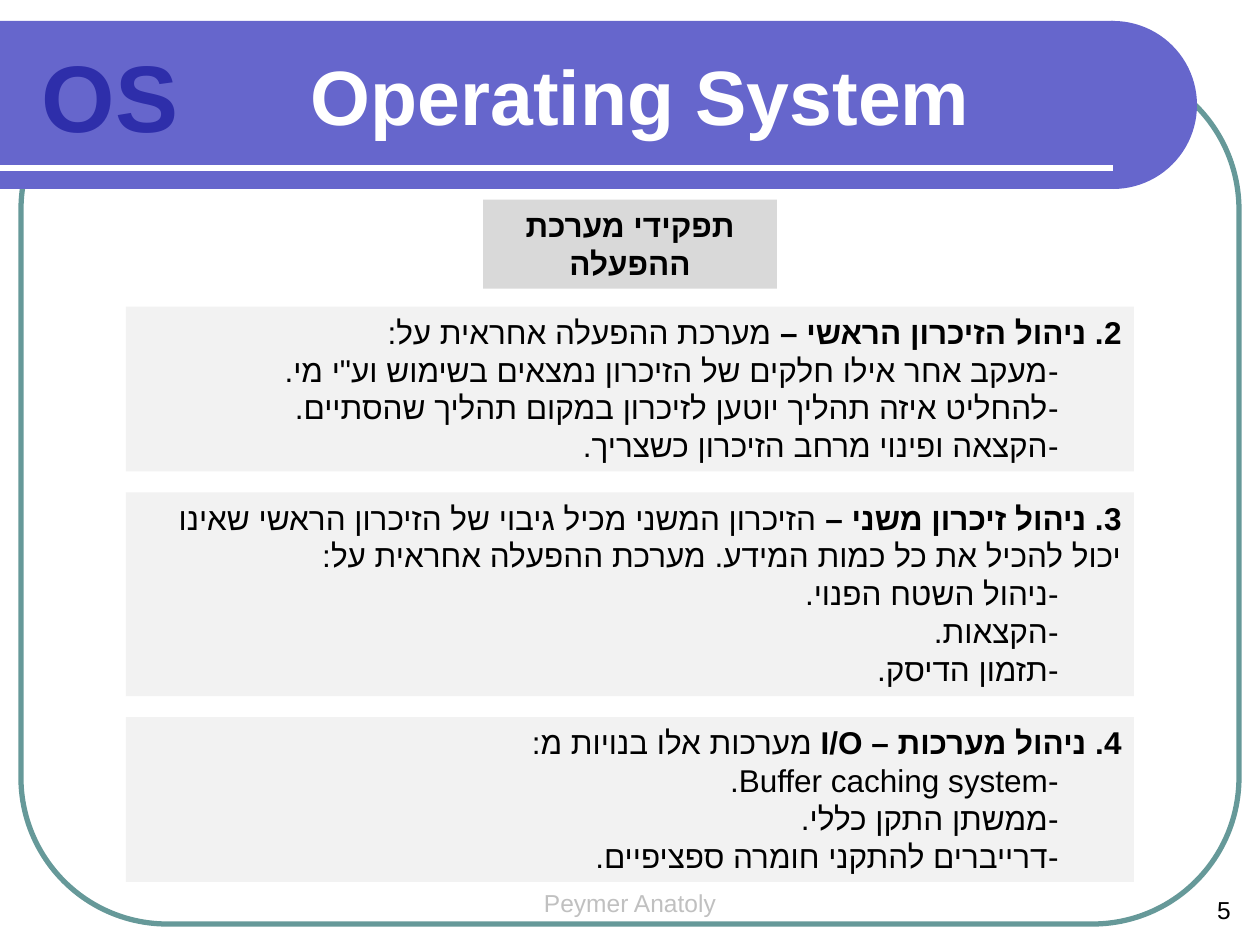
from dataclasses import dataclass
from typing import Any

from lxml.etree import SubElement
from pptx import Presentation
from pptx.dml.color import RGBColor
from pptx.enum.shapes import MSO_CONNECTOR, MSO_SHAPE
from pptx.enum.text import MSO_ANCHOR, PP_ALIGN
from pptx.oxml.ns import qn
from pptx.util import Inches, Pt

COLUMN = Inches(10) // 60


def color(hex_value):
    return RGBColor.from_string(hex_value)


def cells(*counts):
    return [round(count * COLUMN) for count in counts]


@dataclass
class Deck:
    slide: Any
    font: str = "Arial"
    ink: str = "000000"
    band: str = "6666CC"
    frame: str = "669999"
    card_fill: str = "F2F2F2"

    def style(self, run, size, ink=None, bold=False):
        run.font.name = self.font
        run.font.size = Pt(size)
        run.font.bold = bold
        run.font.color.rgb = color(ink or self.ink)
        SubElement(run.font._element, qn("a:cs"), typeface=self.font)

    def fill_paragraph(self, paragraph, parts, size, ink=None, align=PP_ALIGN.CENTER, rtl=False):
        paragraph.alignment = align
        if rtl:
            paragraph._p.get_or_add_pPr().set("rtl", "1")
        for text, bold in parts:
            run = paragraph.add_run()
            run.text = text
            self.style(run, size, ink, bold)

    def shape(self, preset, box, fill=None, line=None):
        shape = self.slide.shapes.add_shape(preset, *cells(*box))
        shape.shadow.inherit = False
        if fill:
            shape.fill.solid()
            shape.fill.fore_color.rgb = color(fill)
        else:
            shape.fill.background()
        if line:
            shape.line.color.rgb = color(line)
            shape.line.width = Pt(3)
        else:
            shape.line.fill.background()
        shape.text_frame.word_wrap = True
        shape.text_frame.vertical_anchor = MSO_ANCHOR.TOP
        return shape

    def rule(self, start, end, ink):
        line = self.slide.shapes.add_connector(MSO_CONNECTOR.STRAIGHT, *cells(*start, *end))
        line.line.color.rgb = color(ink)
        line.line.width = Pt(3)
        SubElement(line._element.spPr, qn("a:effectLst"))

    def label(self, box, text, size, ink=None, bold=False, align=PP_ALIGN.CENTER):
        label = self.slide.shapes.add_textbox(*cells(*box))
        label.text_frame.word_wrap = True
        self.fill_paragraph(label.text_frame.paragraphs[0], [(text, bold)], size, ink, align)

    def heading(self, box, text):
        heading = self.shape(MSO_SHAPE.RECTANGLE, box, "D9D9D9")
        self.fill_paragraph(heading.text_frame.paragraphs[0], [(text, True)], 18, rtl=True)

    def card(self, box, term, intro, duties):
        frame = self.shape(MSO_SHAPE.RECTANGLE, box, self.card_fill).text_frame
        self.fill_paragraph(frame.paragraphs[0], [(term, True), (intro, False)], 18,
                            align=PP_ALIGN.RIGHT, rtl=True)
        for duty in duties:
            paragraph = frame.add_paragraph()
            paragraph.level = 1
            self.fill_paragraph(paragraph, [("-\t" + duty, False)], 18,
                                align=PP_ALIGN.RIGHT, rtl=True)
            properties = paragraph._p.get_or_add_pPr()
            properties.set("marL", str(Inches(0.5)))
            properties.set("indent", "0")

    def title(self, box, text):
        title = self.slide.shapes.title
        title.left, title.top, title.width, title.height = cells(*box)
        frame = title.text_frame
        frame.word_wrap = False
        frame.vertical_anchor = MSO_ANCHOR.MIDDLE
        self.fill_paragraph(frame.paragraphs[0], [(text, True)], 44, "FFFFFF", rtl=True)
        self.slide.shapes._spTree.append(title._element)


ROLES = [
    ("2. ניהול הזיכרון הראשי – ", "מערכת ההפעלה אחראית על:", 1, [
        "מעקב אחר אילו חלקים של הזיכרון נמצאים בשימוש וע\"י מי.",
        "להחליט איזה תהליך יוטען לזיכרון במקום תהליך שהסתיים.",
        "הקצאה ופינוי מרחב הזיכרון כשצריך.",
    ]),
    ("3. ניהול זיכרון משני – ",
     "הזיכרון המשני מכיל גיבוי של הזיכרון הראשי שאינו יכול להכיל את כל כמות המידע. "
     "מערכת ההפעלה אחראית על:", 2, [
         "ניהול השטח הפנוי.",
         "הקצאות.",
         "תזמון הדיסק.",
     ]),
    ("4. ניהול מערכות – I/O ", "מערכות אלו בנויות מ: ", 1, [
        "Buffer caching system.",
        "ממשתן התקן כללי.",
        "דרייברים להתקני חומרה ספציפיים.",
    ]),
]


def main():
    presentation = Presentation()
    presentation.slide_width, presentation.slide_height = Inches(10), Inches(7.5)
    deck = Deck(presentation.slides.add_slide(presentation.slide_layouts[5]))

    deck.label((24.5, 42, 11, 2.1), "Peymer Anatoly", 14, "C0C0C0")
    deck.label((55.2, 42.3, 4, 2), "5", 14, align=PP_ALIGN.RIGHT)

    border = deck.shape(MSO_SHAPE.ROUNDED_RECTANGLE, (1, 3, 58, 41), line=deck.frame)
    border.adjustments[0] = 0.17
    deck.shape(MSO_SHAPE.RECTANGLE, (0, 1, 53, 8), deck.band)
    deck.shape(MSO_SHAPE.OVAL, (49, 1, 8, 8), deck.band)
    deck.rule((0, 8), (53, 8), "FFFFFF")
    deck.label((1, 1.5, 8.5, 6), "OS", 54, "2E2EAA", bold=True)

    top = 14.6
    for term, intro, intro_lines, duties in ROLES:
        height = 0.45 + 1.85 * (intro_lines + len(duties))
        deck.card((6, top, 48, height), term, intro, duties)
        top += height + 1

    deck.heading((23, 9.5, 14, 4.25), "תפקידי מערכת ההפעלה")
    deck.title((11.5, 1, 37, 7), "Operating System ")

    presentation.save("out.pptx")


if __name__ == "__main__":
    main()
